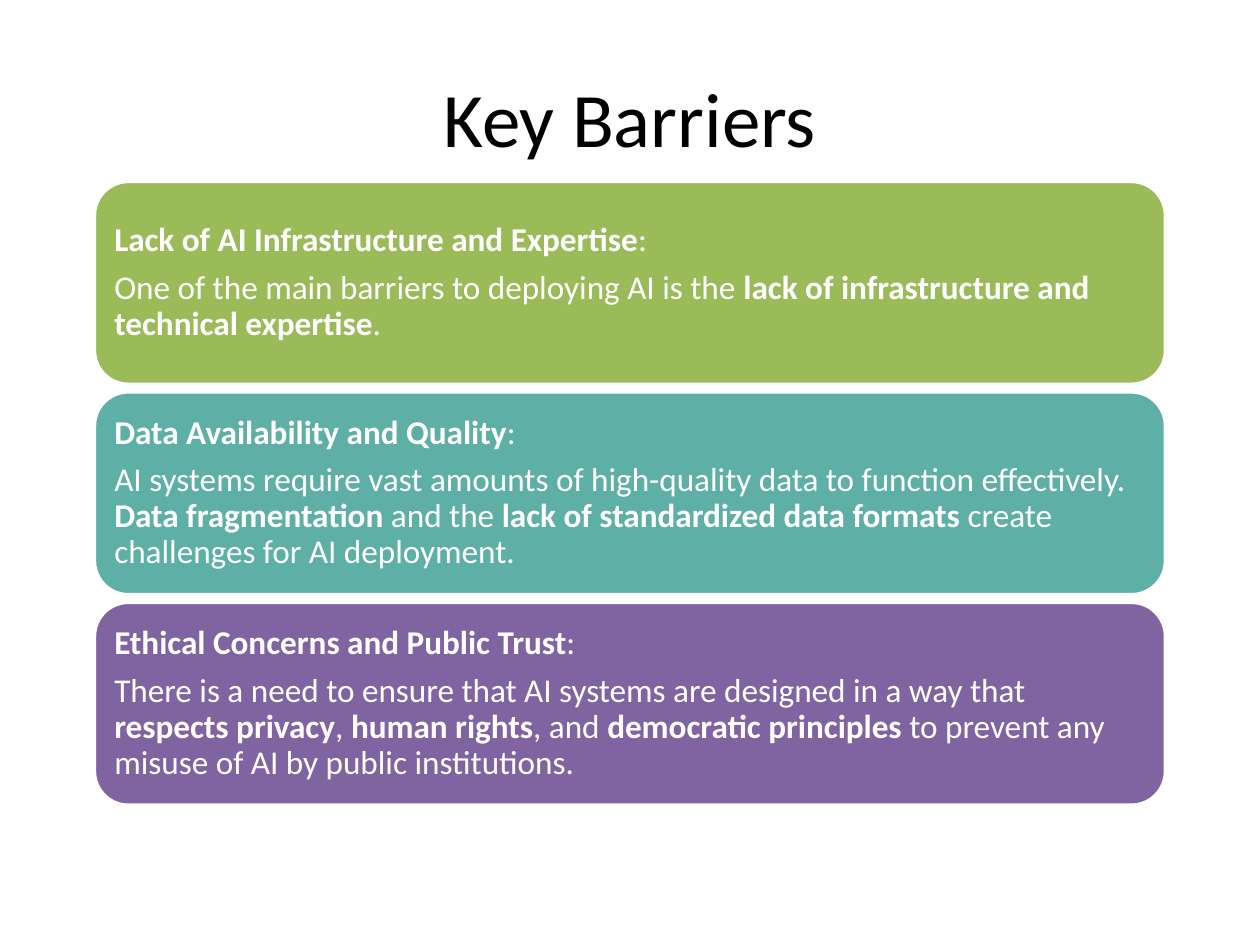
from typing import NamedTuple

from pptx import Presentation
from pptx.dml.color import RGBColor
from pptx.enum.shapes import MSO_SHAPE
from pptx.enum.text import MSO_ANCHOR, PP_ALIGN
from pptx.util import Pt

BLACK = RGBColor(0x00, 0x00, 0x00)
WHITE = RGBColor(0xFF, 0xFF, 0xFF)
GREEN = RGBColor(0x9B, 0xBB, 0x59)
TEAL = RGBColor(0x5E, 0xAF, 0xA6)
PURPLE = RGBColor(0x80, 0x64, 0xA2)
FONT = "Calibri"

# Card stack, in points
CARD_LEFT, CARD_TOP = 54, 103.7
CARD_WIDTH, CARD_HEIGHT = 612, 115.9
CARD_PITCH = 120.25
CARD_INSET = 5.7


class Span(NamedTuple):
    text: str
    bold: bool = False


class Barrier(NamedTuple):
    heading: str
    color: RGBColor
    body: list[Span]


BARRIERS = [
    Barrier("Lack of AI Infrastructure and Expertise", GREEN, [
        Span("One of the main barriers to deploying AI is the "),
        Span("lack of infrastructure and technical expertise", True),
        Span("."),
    ]),
    Barrier("Data Availability and Quality", TEAL, [
        Span("AI systems require vast amounts of high-quality data to function effectively. "),
        Span("Data fragmentation", True),
        Span(" and the "),
        Span("lack of standardized data formats", True),
        Span(" create challenges for AI deployment."),
    ]),
    Barrier("Ethical Concerns and Public Trust", PURPLE, [
        Span("There is a need to ensure that AI systems are designed in a way that "),
        Span("respects privacy", True),
        Span(", "),
        Span("human rights", True),
        Span(", and "),
        Span("democratic principles", True),
        Span(" to prevent any misuse of AI by public institutions."),
    ]),
]


def add_spans(para, spans: list[Span], size: float, color: RGBColor) -> None:
    for span in spans:
        run = para.add_run()
        run.text = span.text
        run.font.name = FONT
        run.font.size = Pt(size)
        run.font.bold = span.bold
        run.font.color.rgb = color


def add_title(page, text: str) -> None:
    title = page.shapes.title
    title.left, title.top = Pt(36), Pt(21.6)
    title.width, title.height = Pt(648), Pt(90)
    frame = title.text_frame
    frame.vertical_anchor = MSO_ANCHOR.MIDDLE
    para = frame.paragraphs[0]
    para.alignment = PP_ALIGN.CENTER
    add_spans(para, [Span(text)], 44, BLACK)


def add_card(page, barrier: Barrier, top: float) -> None:
    card = page.shapes.add_shape(
        MSO_SHAPE.ROUNDED_RECTANGLE,
        Pt(CARD_LEFT), Pt(top), Pt(CARD_WIDTH), Pt(CARD_HEIGHT))
    card.shadow.inherit = False
    card.fill.solid()
    card.fill.fore_color.rgb = barrier.color
    card.line.color.rgb = WHITE
    card.line.width = Pt(2)

    frame = card.text_frame
    frame.word_wrap = True
    frame.vertical_anchor = MSO_ANCHOR.MIDDLE
    frame.margin_left = frame.margin_right = Pt(CARD_INSET)
    frame.margin_top = frame.margin_bottom = Pt(CARD_INSET)

    heading = [Span(barrier.heading, True), Span(":")]
    for para, spans in ((frame.paragraphs[0], heading),
                        (frame.add_paragraph(), barrier.body)):
        para.alignment = PP_ALIGN.LEFT
        para.line_spacing = 0.9
        para.space_after = Pt(6.65)
        add_spans(para, spans, 19, WHITE)


def main() -> None:
    deck = Presentation()
    deck.slide_width, deck.slide_height = Pt(720), Pt(540)
    page = deck.slides.add_slide(deck.slide_layouts[5])  # Title Only

    add_title(page, "Key Barriers")

    # One card per barrier, stacked at an even pitch
    for index, barrier in enumerate(BARRIERS):
        add_card(page, barrier, CARD_TOP + index * CARD_PITCH)

    deck.save("out.pptx")


if __name__ == "__main__":
    main()
